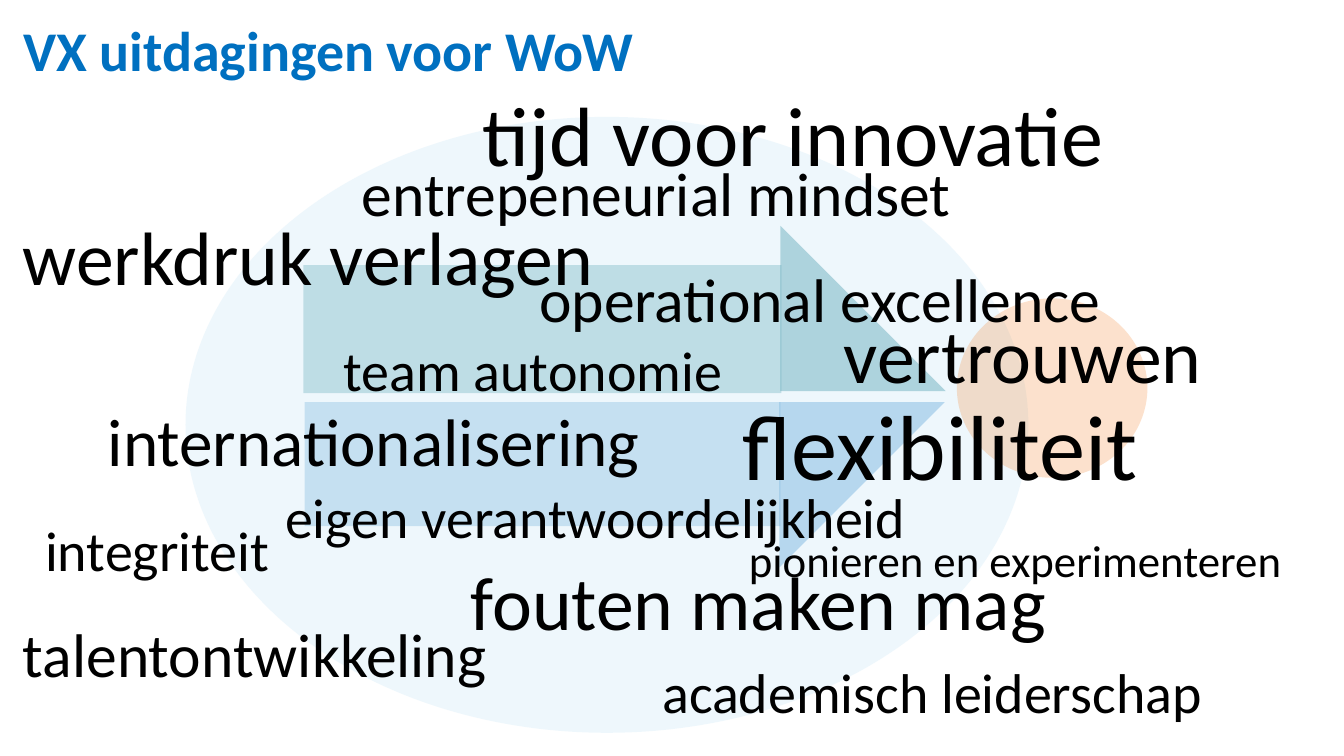
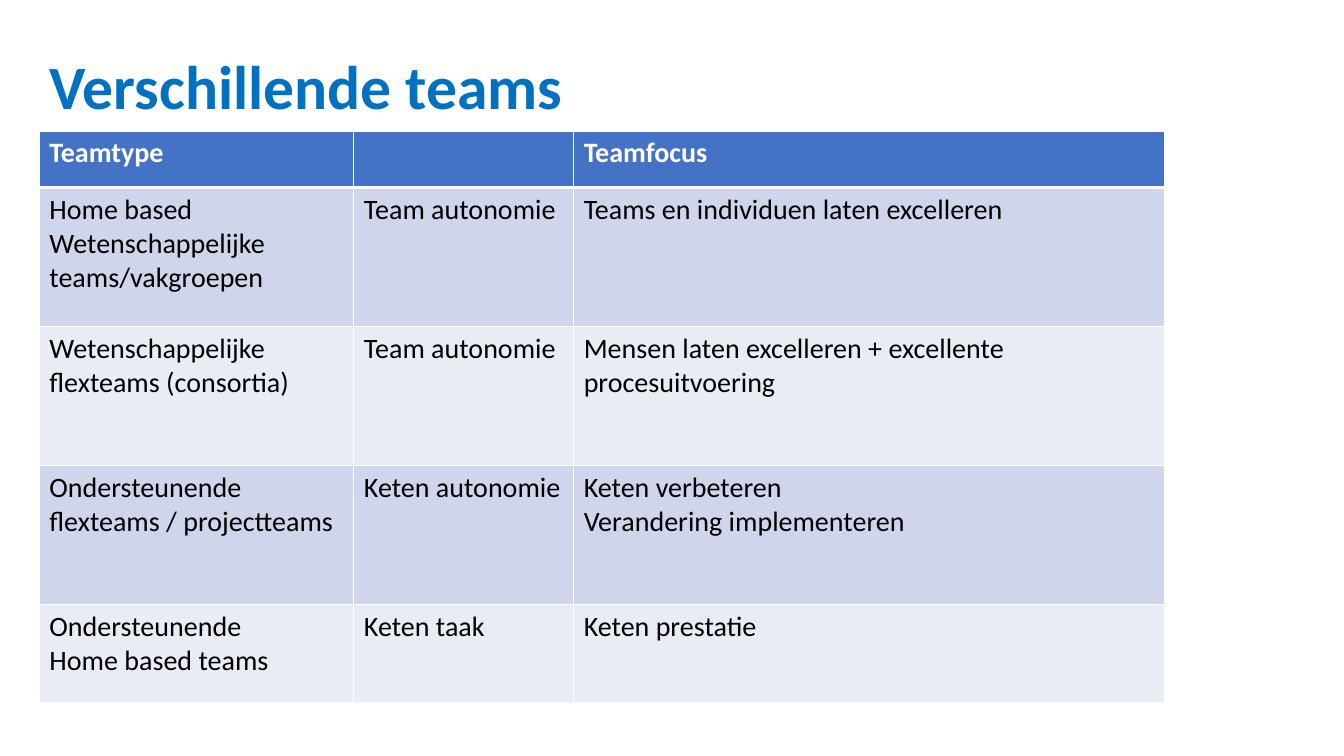
from lxml.etree import Element, SubElement
from pptx import Presentation
from pptx.dml.color import RGBColor
from pptx.enum.shapes import MSO_SHAPE
from pptx.enum.text import MSO_ANCHOR, MSO_AUTO_SIZE, PP_ALIGN
from pptx.oxml.ns import qn
from pptx.util import Emu, Pt

PX = 9144
FONT = "Calibri"
BLUE = RGBColor(0x00, 0x70, 0xC0)
TEAL = RGBColor(0x00, 0x75, 0x8C)
ORANGE = RGBColor(0xF4, 0x76, 0x13)
PALE_BLUE = RGBColor(0xDE, 0xF0, 0xFA)
HEADER_BLUE = RGBColor(0x44, 0x72, 0xC4)
BAND_DARK = RGBColor(0xCF, 0xD5, 0xEA)
BAND_LIGHT = RGBColor(0xE9, 0xEB, 0xF5)
BLACK = RGBColor(0x00, 0x00, 0x00)
WHITE = RGBColor(0xFF, 0xFF, 0xFF)


def format_text(text_frame, size, color, bold=False):
    for paragraph in text_frame.paragraphs:
        paragraph.alignment = PP_ALIGN.LEFT
        paragraph.font.name = FONT
        paragraph.font.size = Pt(size)
        paragraph.font.bold = bold
        paragraph.font.color.rgb = color


def add_titled_slide(text, box, size):
    slide = presentation.slides.add_slide(presentation.slide_layouts[5])
    title = slide.shapes.title
    title.left, title.top, title.width, title.height = [Emu(n * PX) for n in box]
    title.text_frame.text = text
    title.text_frame.auto_size = MSO_AUTO_SIZE.NONE
    title.text_frame.vertical_anchor = MSO_ANCHOR.MIDDLE
    title.text_frame.paragraphs[0].line_spacing = 0.9
    format_text(title.text_frame, size, BLUE, bold=True)
    return slide


presentation = Presentation()
presentation.slide_width = Emu(1333 * PX)
presentation.slide_height = Emu(750 * PX)

challenges = add_titled_slide("VX uitdagingen voor WoW", (13, 9, 1150, 88), 40)

backdrop_parts = [
    (MSO_SHAPE.OVAL, (184, 116, 836, 611), PALE_BLUE, 51, None),
    (MSO_SHAPE.RECTANGLE, (301, 263, 474, 127), TEAL, 20, None),
    (MSO_SHAPE.ISOSCELES_TRIANGLE, (774, 224, 164, 164), TEAL, 27, 1),
    (MSO_SHAPE.RECTANGLE, (302, 399, 472, 123), BLUE, 17, None),
    (MSO_SHAPE.ISOSCELES_TRIANGLE, (773, 399, 164, 164), BLUE, 23, 0),
    (MSO_SHAPE.OVAL, (949, 296, 189, 178), ORANGE, 21, None),
]
backdrop = challenges.shapes.add_group_shape()
for kind, box, color, opacity, apex in backdrop_parts:
    part = backdrop.shapes.add_shape(kind, *[Emu(n * PX) for n in box])
    part.shadow.inherit = False
    part.line.fill.background()
    part.fill.solid()
    part.fill.fore_color.rgb = color
    rgb = part.fill._xPr.find(qn("a:solidFill")).find(qn("a:srgbClr"))
    SubElement(rgb, qn("a:alpha")).set("val", str(opacity * 1000))
    if apex is not None:
        part.adjustments[0] = apex
        part.rotation = 90

words = [
    ("tijd voor innovatie", (469, 77, 646, 111), 60),
    ("vertrouwen", (827, 301, 425, 101), 54),
    ("operational excellence", (525, 254, 663, 84), 44),
    ("team autonomie", (331, 328, 408, 77), 40),
    ("werkdruk verlagen", (13, 203, 606, 101), 54),
    ("entrepeneurial mindset", (349, 149, 659, 84), 44),
    ("internationalisering", (97, 391, 627, 91), 48),
    ("eigen verantwoordelijkheid", (273, 474, 783, 77), 40),
    ("fouten maken mag", (457, 546, 641, 101), 54),
    ("flexibiliteit", (727, 380, 460, 121), 66),
    ("talentontwikkeling", (13, 606, 663, 84), 44),
    ("academisch leiderschap", (647, 647, 646, 77), 40),
    ("pionieren en experimenteren", (733, 524, 596, 64), 32),
    ("integriteit", (35, 507, 314, 77), 40),
]
for word, box, size in words:
    word_frame = challenges.shapes.add_textbox(*[Emu(n * PX) for n in box]).text_frame
    word_frame.word_wrap = True
    word_frame.auto_size = MSO_AUTO_SIZE.SHAPE_TO_FIT_TEXT
    word_frame.text = word
    format_text(word_frame, size, BLACK)

teams = add_titled_slide("Verschillende teams", (39, 28, 1261, 121), 44)

team_rows = [
    ("Teamtype", "", "Teamfocus"),
    ("Home based Wetenschappelijke teams/vakgroepen", "Team autonomie",
     "Teams en individuen laten excelleren"),
    ("Wetenschappelijke flexteams (consortia)", "Team autonomie",
     "Mensen laten excelleren + excellente procesuitvoering"),
    ("Ondersteunende flexteams / projectteams", "Keten autonomie",
     "Keten verbeteren\nVerandering implementeren"),
    ("Ondersteunende\nHome based teams", "Keten taak", "Keten prestatie"),
]
column_widths = [312, 218, 586]
row_heights = [56, 138, 138, 138, 97]
team_table = teams.shapes.add_table(
    len(row_heights), len(column_widths), Emu(39 * PX), Emu(130 * PX),
    Emu(sum(column_widths) * PX), Emu(sum(row_heights) * PX)).table
for column, width in zip(team_table.columns, column_widths):
    column.width = Emu(width * PX)
for row_index, (row, height) in enumerate(zip(team_table.rows, row_heights)):
    row.height = Emu(height * PX)
    is_header = row_index == 0
    band = HEADER_BLUE if is_header else (BAND_LIGHT, BAND_DARK)[row_index % 2]
    for cell, text in zip(row.cells, team_rows[row_index]):
        cell.fill.solid()
        cell.fill.fore_color.rgb = band
        cell.text_frame.text = text
        format_text(cell.text_frame, 20, WHITE if is_header else BLACK, is_header)
        if is_header:
            rule = Element(qn("a:lnB"), w=str(Pt(3)))
            rule_fill = SubElement(rule, qn("a:solidFill"))
            SubElement(rule_fill, qn("a:srgbClr"), val=str(WHITE))
            cell._tc.get_or_add_tcPr().insert(0, rule)

presentation.save("out.pptx")
